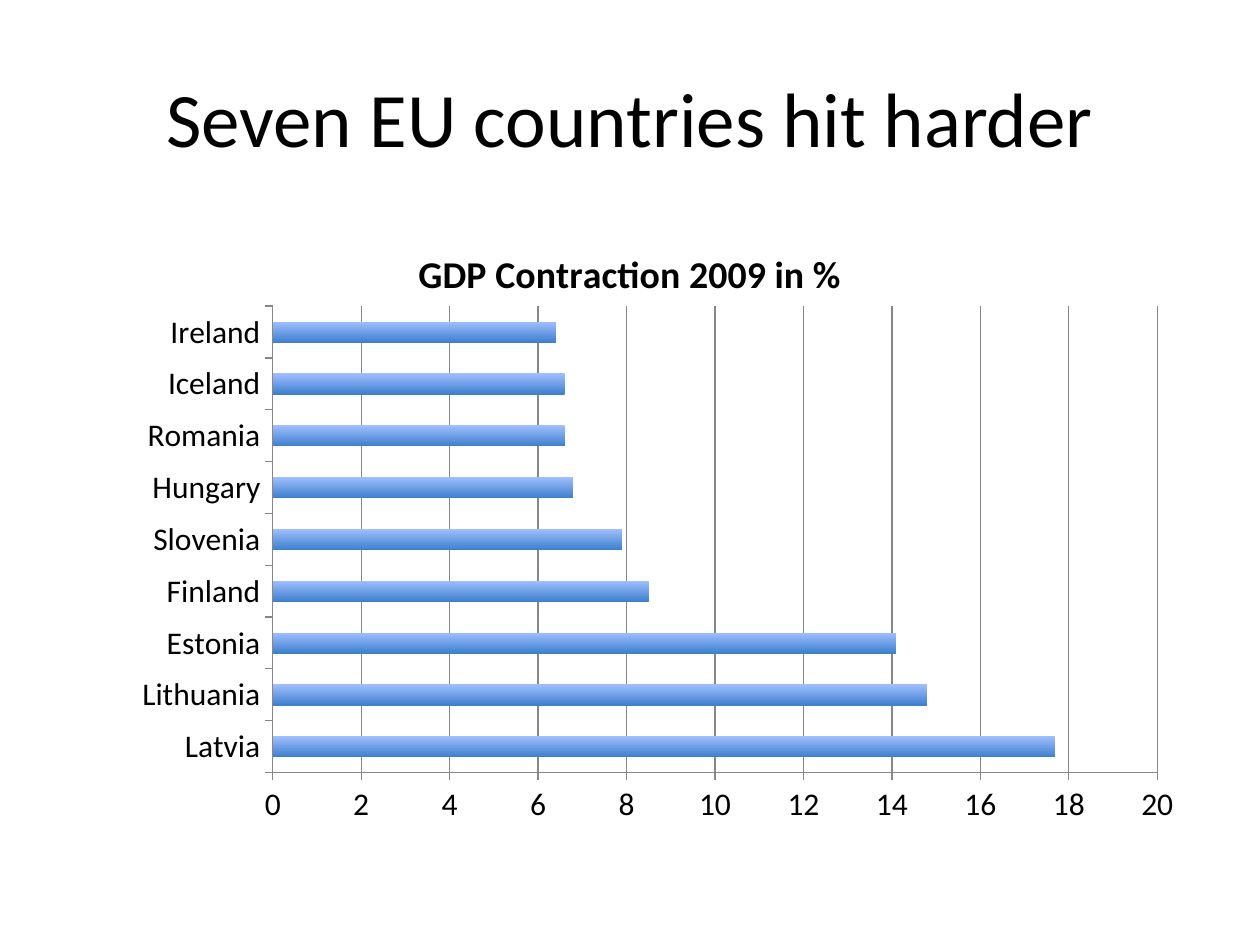
from lxml.etree import SubElement
from pptx import Presentation
from pptx.chart.data import CategoryChartData
from pptx.dml.color import RGBColor
from pptx.enum.chart import XL_CHART_TYPE, XL_TICK_MARK
from pptx.enum.text import MSO_ANCHOR, PP_ALIGN
from pptx.oxml.ns import qn
from pptx.util import Cm, Pt

COLOURS = {"text": "000000", "line": "878787", "bar_top": "A0BFFF", "bar_bottom": "3F80CD"}
FONT = "Calibri"
CONTRACTIONS = {
    "Latvia": 17.7,
    "Lithuania": 14.8,
    "Estonia": 14.1,
    "Finland": 8.5,
    "Slovenia": 7.9,
    "Hungary": 6.8,
    "Romania": 6.6,
    "Iceland": 6.6,
    "Ireland": 6.4,
}
PLOT_LAYOUT = {
    "layoutTarget": "inner",
    "xMode": "edge",
    "yMode": "edge",
    "x": 0.185,
    "y": 0.137,
    "w": 0.78,
    "h": 0.748,
}


def colour(name):
    """Return the named colour."""
    return RGBColor.from_string(COLOURS[name])


def apply_format(target, values):
    """Set each attribute of the target from a dict."""
    for name, value in values.items():
        setattr(target, name, value)


def format_font(font, size, bold=False):
    """Give a font its typeface, size, weight and colour."""
    apply_format(font, {"name": FONT, "size": Pt(size), "bold": bold})
    font.color.rgb = colour("text")


def format_line(line):
    """Give a chart line its colour and width."""
    line.color.rgb = colour("line")
    line.width = Pt(0.75)


def write_text(frame, text, size, bold=False):
    """Write one centred paragraph into a text frame."""
    para = frame.paragraphs[0]
    para.alignment = PP_ALIGN.CENTER
    span = para.add_run()
    span.text = text
    format_font(span.font, size, bold)


def add_title(page, text):
    """Place and fill the title placeholder."""
    box = page.shapes.title
    apply_format(box, {"left": Cm(1.27), "top": Cm(0.76), "width": Cm(22.86), "height": Cm(3.18)})
    box.text_frame.vertical_anchor = MSO_ANCHOR.MIDDLE
    write_text(box.text_frame, text, 44)


def set_plot_layout(chart):
    """Fix the inner plot area within the chart."""
    area = chart.plots[0]._element.getparent()
    for old in area.findall(qn("c:layout")):
        area.remove(old)
    layout = SubElement(area, qn("c:layout"))
    area.insert(0, layout)
    manual = SubElement(layout, qn("c:manualLayout"))
    for name, value in PLOT_LAYOUT.items():
        SubElement(manual, qn(f"c:{name}")).set("val", str(value))


def format_axes(chart):
    """Style both axes and the gridlines of the value axis."""
    for axis in (chart.category_axis, chart.value_axis):
        axis.major_tick_mark = XL_TICK_MARK.OUTSIDE
        axis.minor_tick_mark = XL_TICK_MARK.NONE
        format_line(axis.format.line)
    apply_format(
        chart.value_axis,
        {"minimum_scale": 0, "maximum_scale": 20, "major_unit": 2, "has_major_gridlines": True},
    )
    format_line(chart.value_axis.major_gridlines.format.line)


def format_bars(plot):
    """Set the bar spacing and shade the bars from top to bottom."""
    apply_format(plot, {"gap_width": 150, "vary_by_categories": False})
    series = plot.series[0]
    series.invert_if_negative = False
    fill = series.format.fill
    fill.gradient()
    fill.gradient_angle = 270
    for stop, name in zip(fill.gradient_stops, ("bar_top", "bar_bottom")):
        stop.color.rgb = colour(name)


def add_bar_chart(page, title, values):
    """Add the horizontal bar chart with its heading."""
    data = CategoryChartData()
    data.categories = list(values)
    data.add_series("Series 1", list(values.values()))
    chart = page.shapes.add_chart(
        XL_CHART_TYPE.BAR_CLUSTERED, Cm(1.27), Cm(4.45), Cm(22.86), Cm(12.57), data
    ).chart
    apply_format(chart, {"has_legend": False, "has_title": True})
    format_font(chart.font, 18)
    write_text(chart.chart_title.text_frame, title, 21.6, True)
    chart.chart_title.include_in_layout = False
    set_plot_layout(chart)
    format_axes(chart)
    format_bars(chart.plots[0])


def main():
    """Build and save the deck."""
    deck = Presentation()
    apply_format(deck, {"slide_width": Cm(25.4), "slide_height": Cm(19.05)})
    page = deck.slides.add_slide(deck.slide_layouts[5])
    add_title(page, "Seven EU countries hit harder")
    add_bar_chart(page, "GDP Contraction 2009 in %", CONTRACTIONS)
    deck.save("out.pptx")


if __name__ == "__main__":
    main()
